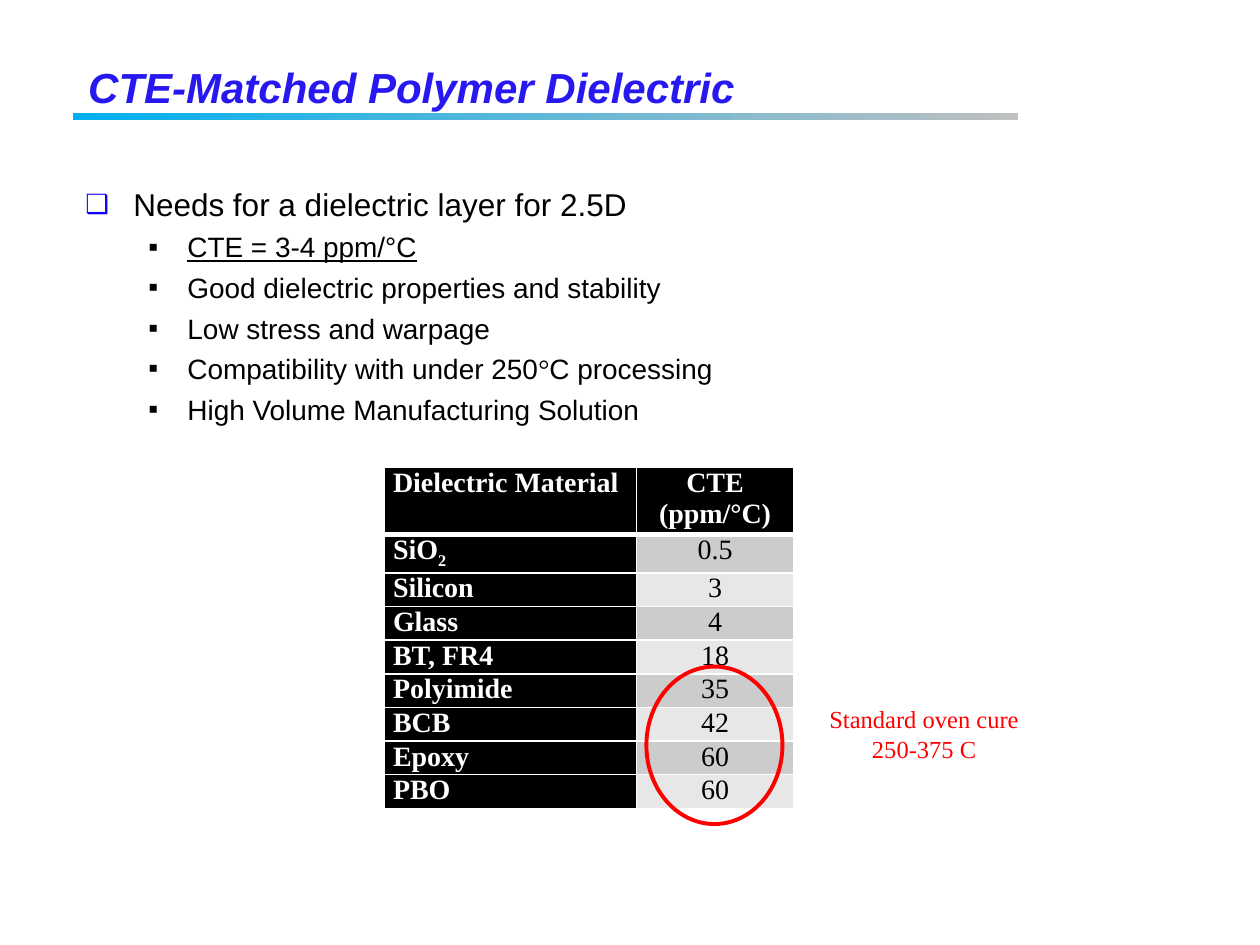
from dataclasses import dataclass

from lxml.etree import SubElement
from pptx import Presentation
from pptx.dml.color import RGBColor
from pptx.enum.shapes import MSO_SHAPE
from pptx.enum.text import MSO_ANCHOR, MSO_AUTO_SIZE, PP_ALIGN
from pptx.oxml.ns import qn
from pptx.util import Inches, Pt


@dataclass(frozen=True)
class Theme:
    sans: str = "Arial"
    serif: str = "Times New Roman"
    title: str = "2718F0"
    bullet: str = "0F03FB"
    dark: str = "000000"
    light: str = "FFFFFF"
    bands: tuple = ("CCCCCC", "E7E7E7")
    rule: tuple = ("00B0F0", "BFBFBF")
    accent: str = "FF0000"
    title_size: int = 24
    lead_size: int = 18
    text_size: int = 16
    note_size: int = 14


THEME = Theme()

NEEDS = [
    "CTE = 3-4 ppm/°C",
    "Good dielectric properties and stability",
    "Low stress and warpage",
    "Compatibility with under 250°C processing",
    "High Volume Manufacturing Solution",
]
MATERIALS = [
    ("SiO2", "0.5"), ("Silicon", "3"), ("Glass", "4"), ("BT, FR4", "18"),
    ("Polyimide", "35"), ("BCB", "42"), ("Epoxy", "60"), ("PBO", "60"),
]


def color(value):
    return RGBColor.from_string(value)


def add_span(para, text, size=THEME.text_size, font=THEME.sans, ink=THEME.dark,
             bold=False, italic=False, underline=False, baseline=0):
    span = para.add_run()
    span.text = text
    span.font.size, span.font.name = Pt(size), font
    span.font.color.rgb = color(ink)
    span.font.bold, span.font.italic, span.font.underline = bold, italic, underline
    if baseline:
        span._r.get_or_add_rPr().set("baseline", str(baseline * 1000))


def set_bullet(para, char, ink, left, hanging, percent=100):
    props = para._p.get_or_add_pPr()
    props.set("marL", str(Inches(left)))
    props.set("indent", str(-Inches(hanging)))
    SubElement(SubElement(props, qn("a:buClr")), qn("a:srgbClr"), val=ink)
    SubElement(props, qn("a:buSzPct"), val=str(percent * 1000))
    SubElement(props, qn("a:buFont"), typeface=THEME.sans)
    SubElement(props, qn("a:buChar"), char=char)


def set_borders(cell, **widths):
    """Draw light borders; widths are points by side: L, R, T, B."""
    props = cell._tc.get_or_add_tcPr()
    for side in "LRTB":
        line = SubElement(props, qn(f"a:ln{side}"), w=str(Pt(widths.get(side, 1))))
        fill = SubElement(line, qn("a:solidFill"))
        SubElement(fill, qn("a:srgbClr"), val=THEME.light)


def add_title(page, left, top, width, height):
    title = page.shapes.title
    title.left, title.top, title.width, title.height = left, top, width, height
    title.text_frame.vertical_anchor = MSO_ANCHOR.MIDDLE
    para = title.text_frame.paragraphs[0]
    para.alignment = PP_ALIGN.LEFT
    add_span(para, "CTE-Matched Polymer Dielectric", size=THEME.title_size,
             ink=THEME.title, bold=True, italic=True)


def add_title_rule(page, left, top, width, height):
    rule = page.shapes.add_shape(MSO_SHAPE.RECTANGLE, left, top, width, height)
    rule.shadow.inherit = False
    rule.line.fill.background()
    rule.fill.gradient()
    rule.fill.gradient_angle = 0
    for position, (stop, ink) in enumerate(zip(rule.fill.gradient_stops, THEME.rule)):
        stop.position = position
        stop.color.rgb = color(ink)


def add_needs(page, left, top, width, height):
    frame = page.shapes.add_textbox(left, top, width, height).text_frame
    frame.word_wrap = True
    lead = frame.paragraphs[0]
    set_bullet(lead, "❑", THEME.bullet, 0.38, 0.38, percent=84)
    add_span(lead, "Needs for a dielectric layer for 2.5D", size=THEME.lead_size)
    for index, need in enumerate(NEEDS):
        para = frame.add_paragraph()
        para.level = 1
        para.space_before = Pt(4)
        set_bullet(para, "▪", THEME.dark, 0.81, 0.31)
        if need.startswith("Compatibility"):
            before, degree, after = need.partition("°")
            add_span(para, before)
            add_span(para, degree, font=THEME.serif)
            add_span(para, after)
        else:
            add_span(para, need, underline=index == 0)


def fill_cell(cell, text, fill, ink, bold, align):
    cell.margin_left = cell.margin_right = Inches(0.07)
    cell.margin_top = cell.margin_bottom = 0
    cell.fill.solid()
    cell.fill.fore_color.rgb = color(fill)
    para = cell.text_frame.paragraphs[0]
    para.alignment = align
    style = dict(font=THEME.serif, ink=ink, bold=bold)
    if text == "SiO2":
        add_span(para, "SiO", **style)
        add_span(para, "2", baseline=-25, **style)
    else:
        add_span(para, text, **style)


def add_materials_table(page, left, top, width, height):
    rows = [("Dielectric Material", "CTE (ppm/°C)"), *MATERIALS]
    table = page.shapes.add_table(len(rows), 2, left, top, width, height).table
    table.columns[0].width = Inches(2)
    table.columns[1].width = width - Inches(2)
    for row, texts in enumerate(rows):
        table.rows[row].height = Inches(0.23)
        for column, text in enumerate(texts):
            cell = table.cell(row, column)
            heading = row == 0 or column == 0
            set_borders(cell, T=3 if row == 1 else 1, B=3 if row == 0 else 1)
            fill_cell(cell, text,
                      fill=THEME.dark if heading else THEME.bands[(row - 1) % 2],
                      ink=THEME.light if heading else THEME.dark,
                      bold=heading,
                      align=PP_ALIGN.CENTER if column else PP_ALIGN.JUSTIFY)


def add_highlight(page, left, top, width, height):
    ring = page.shapes.add_shape(MSO_SHAPE.OVAL, left, top, width, height)
    ring.shadow.inherit = False
    ring.fill.background()
    ring.line.color.rgb = color(THEME.accent)
    ring.line.width = Pt(2.25)


def add_cure_note(page, left, top, width, height):
    frame = page.shapes.add_textbox(left, top, width, height).text_frame
    frame.word_wrap = False
    frame.auto_size = MSO_AUTO_SIZE.SHAPE_TO_FIT_TEXT
    for index, text in enumerate(["Standard oven cure", "250-375 C"]):
        para = frame.add_paragraph() if index else frame.paragraphs[0]
        para.alignment = PP_ALIGN.CENTER
        add_span(para, text, size=THEME.note_size, font=THEME.serif, ink=THEME.accent)


def main():
    deck = Presentation()
    deck.slide_width, deck.slide_height = Inches(10), Inches(7.5)
    page = deck.slides.add_slide(deck.slide_layouts.get_by_name("Title Only"))
    regions = [
        (add_title_rule, (0.58, 0.9, 7.5, 0.05)),
        (add_title, (0.6, 0.35, 8.89, 0.67)),
        (add_needs, (0.58, 1.42, 9.34, 5.5)),
        (add_materials_table, (3.05, 3.71, 3.25, 2.67)),
        (add_highlight, (5.13, 5.29, 1.08, 1.25)),
        (add_cure_note, (6.38, 5.54, 1.91, 0.57)),
    ]
    for add_region, box in regions:
        add_region(page, *map(Inches, box))
    deck.save("out.pptx")


if __name__ == "__main__":
    main()
